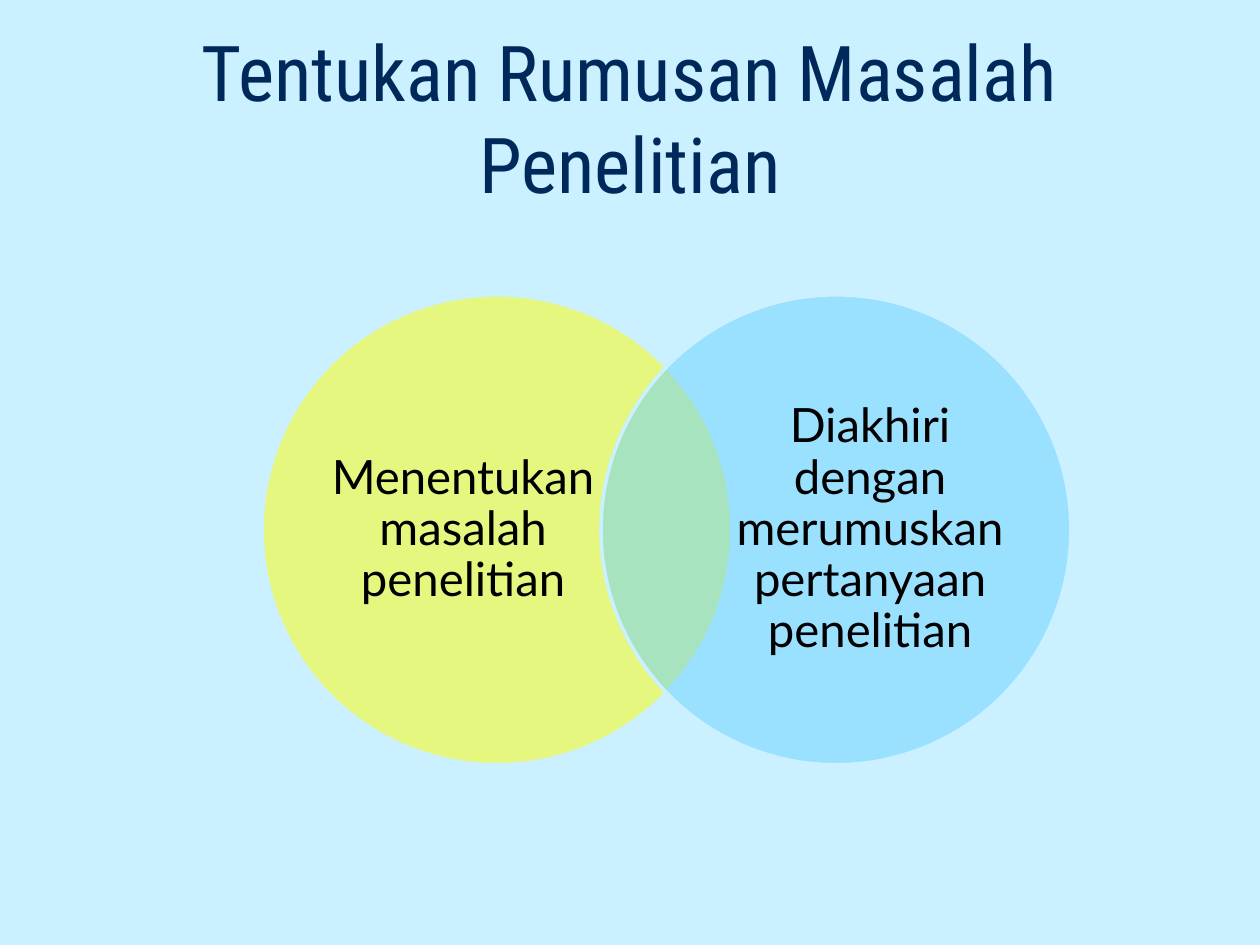
from dataclasses import dataclass

from lxml import etree
from pptx import Presentation
from pptx import util as u
from pptx.dml.color import RGBColor
from pptx.enum import shapes, text
from pptx.oxml.ns import qn


@dataclass(frozen=True)
class Theme:
    background: RGBColor = RGBColor.from_string("CBF0FF")
    title: RGBColor = RGBColor.from_string("00295B")
    body: RGBColor = RGBColor.from_string("000000")
    yellow: RGBColor = RGBColor.from_string("FFFF00")
    blue: RGBColor = RGBColor.from_string("6AD1FF")
    title_font: str = "Roboto Condensed"
    body_font: str = "Lato"
    title_size: int = 44
    body_size: int = 27


theme = Theme()


def write_centred(frame, wording, font_name, size, colour):
    frame.text = wording
    frame.word_wrap = True
    frame.auto_size = text.MSO_AUTO_SIZE.NONE
    frame.vertical_anchor = text.MSO_ANCHOR.MIDDLE
    para = frame.paragraphs[0]
    para.alignment = text.PP_ALIGN.CENTER
    for span in para.runs:
        span.font.name = font_name
        span.font.size = u.Pt(size)
        span.font.color.rgb = colour
    return para


deck = Presentation()
deck.slide_width, deck.slide_height = u.Inches(10), u.Inches(7.5)
page = deck.slides.add_slide(deck.slide_layouts.get_by_name("Title Only"))
page.background.fill.solid()
page.background.fill.fore_color.rgb = theme.background

title = page.shapes.title
title.left, title.top = u.Inches(0.5), u.Inches(0.3)
title.width, title.height = u.Inches(9), u.Inches(1.25)
write_centred(title.text_frame, "Tentukan Rumusan Masalah Penelitian",
              theme.title_font, theme.title_size, theme.title)

# Two overlapping half-transparent circles, each with its label
diameter = u.Inches(3.73)
venn = page.shapes.add_group_shape()
circles = [
    (2.08, theme.yellow, 2.6, "Menentukan masalah penelitian"),
    (4.77, theme.blue, 5.83, "Diakhiri dengan merumuskan pertanyaan penelitian"),
]
for circle_left, colour, label_left, wording in circles:
    circle = venn.shapes.add_shape(shapes.MSO_SHAPE.OVAL, u.Inches(circle_left),
                                   u.Inches(2.34), diameter, diameter)
    circle.shadow.inherit = False
    circle.fill.solid()
    circle.fill.fore_color.rgb = colour
    fill_colour = circle.fill._xPr.find(qn("a:solidFill"))[0]
    etree.SubElement(fill_colour, qn("a:alpha"), val="50000")
    circle.line.color.rgb = theme.background
    circle.line.width = u.Pt(2)

    label = venn.shapes.add_textbox(u.Inches(label_left), u.Inches(2.78),
                                    u.Inches(2.15), u.Inches(2.85))
    frame = label.text_frame
    frame.margin_left = frame.margin_right = frame.margin_top = frame.margin_bottom = 0
    para = write_centred(frame, wording, theme.body_font, theme.body_size, theme.body)
    para.line_spacing = 0.9

deck.save("out.pptx")
